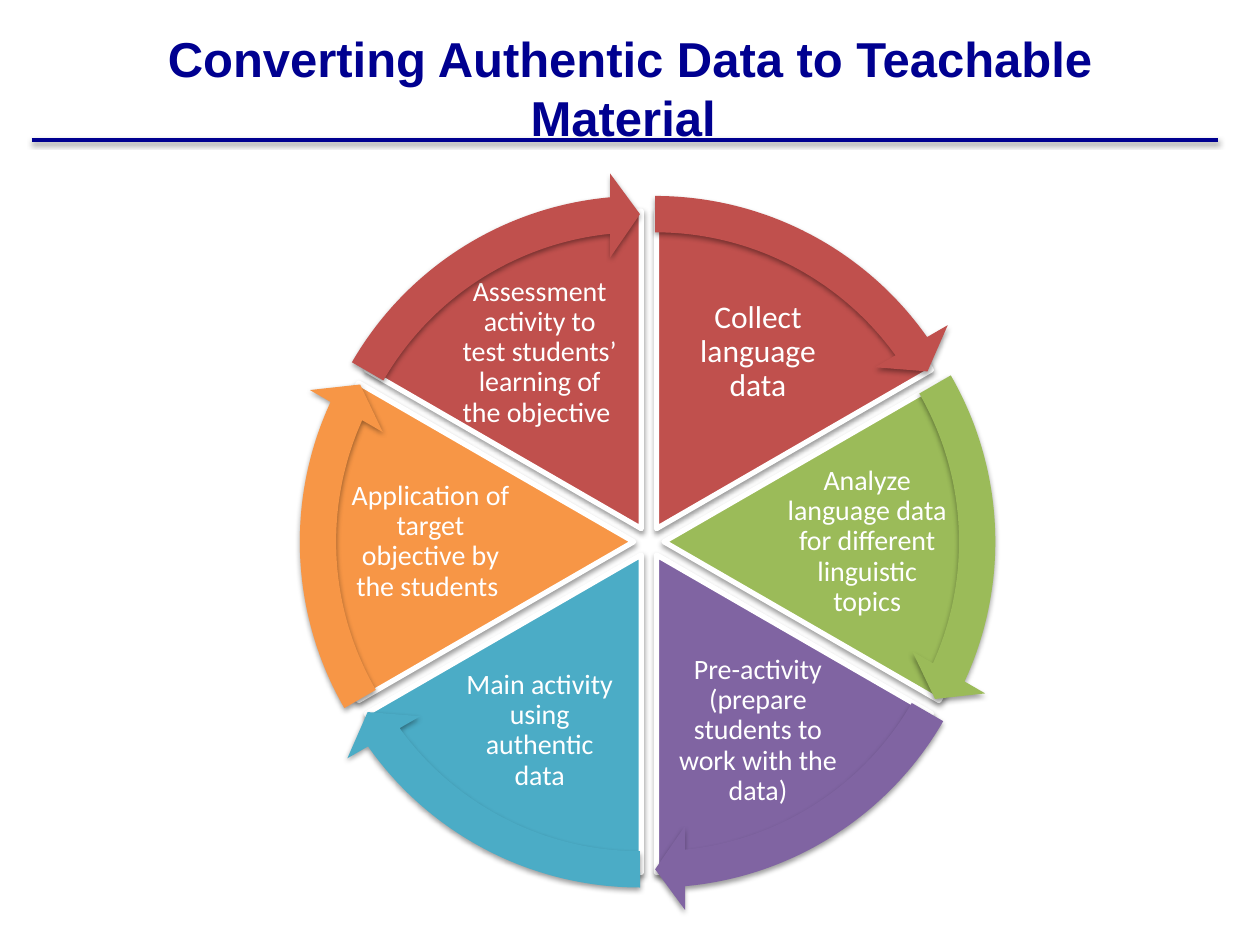
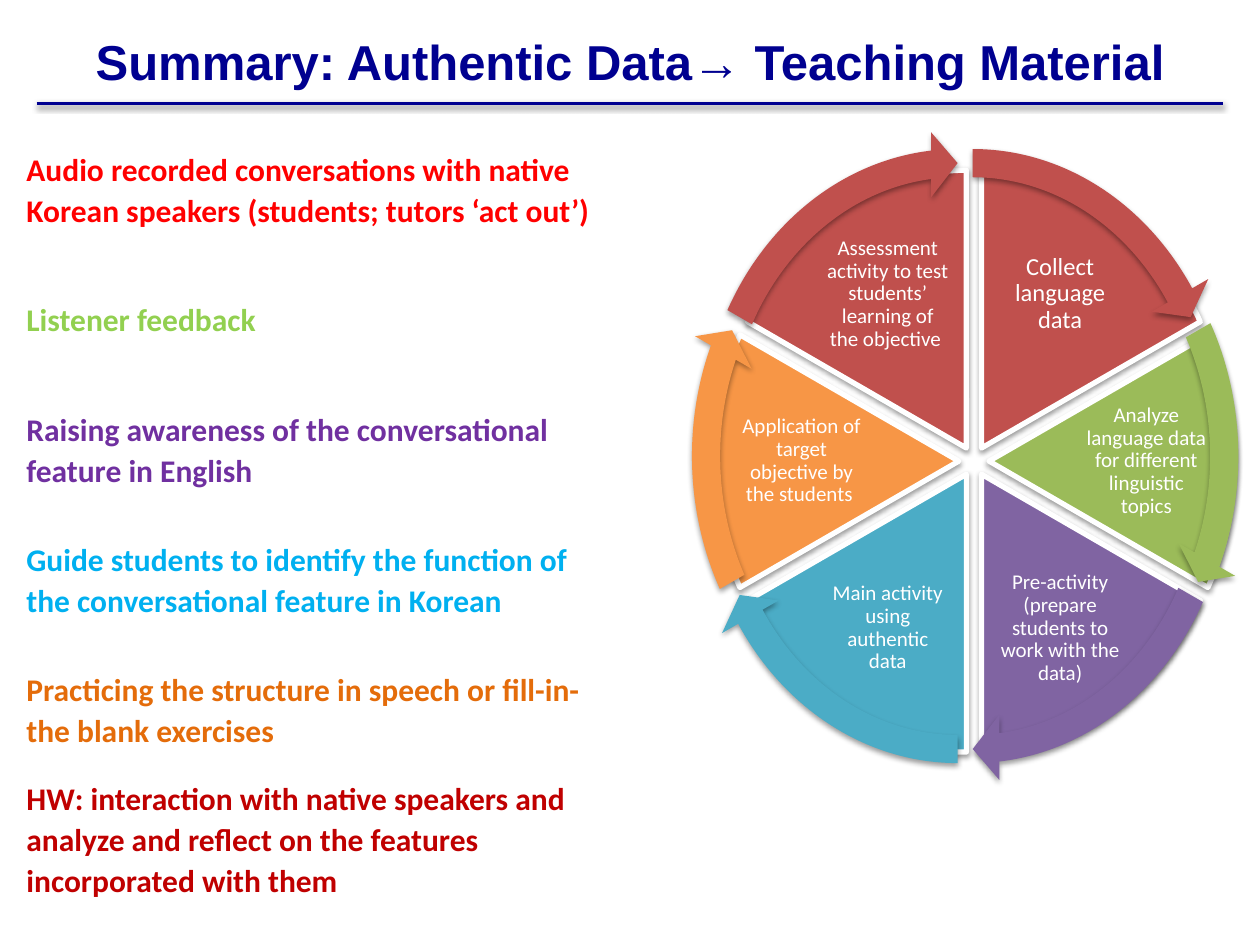
import math
from lxml import etree
from pptx import Presentation
from pptx import util as u
from pptx.dml.color import RGBColor
from pptx.enum import shapes, text
from pptx.oxml import ns

COLORS = {
    "navy": "000090", "white": "FFFFFF", "black": "000000",
    "brick": "C0504D", "olive": "9BBB59", "purple": "8064A2",
    "teal": "4BACC6", "orange": "F79646",
    "red": "FF0000", "lime": "92D050", "violet": "7030A0",
    "sky": "00B0F0", "amber": "E46C0A", "dark red": "C00000",
}
RGB = {name: RGBColor.from_string(value) for name, value in COLORS.items()}

presentation = Presentation()
presentation.slide_width = u.Inches(10)
presentation.slide_height = u.Inches(7.5)
UNIT = presentation.slide_width / 100  # grid of 100 columns by 75 rows


def grid(*lengths):
    return [u.Emu(round(length * UNIT)) for length in lengths]


def add_shadow(shape):
    effects = etree.SubElement(shape._element.spPr, ns.qn("a:effectLst"))
    shadow = etree.SubElement(effects, ns.qn("a:outerShdw"), blurRad="40000",
                              dist="20000", dir="5400000", rotWithShape="0")
    color = etree.SubElement(shadow, ns.qn("a:srgbClr"), val=COLORS["black"])
    etree.SubElement(color, ns.qn("a:alpha"), val="38000")


# Steps of the cycle, clockwise from the top right
STEPS = [
    ("Collect language data", "brick"),
    ("Analyze language data for different linguistic topics", "olive"),
    ("Pre-activity (prepare students to work with the data)", "purple"),
    ("Main activity using authentic data", "teal"),
    ("Application of target objective by the students ", "orange"),
    ("Assessment activity to test students’ learning of the objective ", "brick"),
]
EXAMPLES = [
    ("Audio recorded conversations with native Korean speakers "
     "(students; tutors ‘act out’)", "red"),
    ("Listener feedback", "lime"),
    ("Raising awareness of the conversational feature in English", "violet"),
    ("Guide students to identify the function of the conversational "
     "feature in Korean", "sky"),
    ("Practicing the structure in speech or fill-in-the blank exercises", "amber"),
    ("HW: interaction with native speakers and analyze and reflect on the "
     "features incorporated with them", "dark red"),
]

# Angles count 216 to a full turn, the scale of the shape adjustments
TURN, SLICE, HEAD = 216, 36, 3.275
SPREAD = 1.2  # distance of each slice from the centre of the wheel

PAGES = [
    {"title": "Converting Authentic Data to Teachable Material ",
     "title_height": 12.5, "rule": (2.5, 96.7, 11.1),
     "pie_center": (51.5, 43), "pie_size": (50.4, 50.4),
     "arrow_center": (51.4, 43), "arrow_size": (56.6, 56.6), "font_size": 16},
    {"title": "Summary: Authentic Data→ Teaching Material",
     "title_height": 8.2, "rule": (2.9, 97.1, 8.2),
     "pie_center": (77.3, 36.6), "pie_size": (39, 44.1),
     "arrow_center": (76.6, 36.2), "arrow_size": (43.9, 49.6), "font_size": 12},
]

for page in PAGES:
    slide = presentation.slides.add_slide(presentation.slide_layouts[5])

    # Title and the rule under it
    title = slide.shapes.title
    title.left, title.top, title.width, title.height = grid(
        5, 0.7, 90, page["title_height"])
    title.text_frame.text = page["title"]
    title.text_frame.auto_size = text.MSO_AUTO_SIZE.NONE
    title.text_frame.vertical_anchor = text.MSO_ANCHOR.MIDDLE
    paragraph = title.text_frame.paragraphs[0]
    paragraph.alignment = text.PP_ALIGN.CENTER
    paragraph.font.name, paragraph.font.size = "Arial", u.Pt(28)
    paragraph.font.bold = True
    paragraph.font.color.rgb = RGB["navy"]

    start, end, height = page["rule"]
    rule = slide.shapes.add_connector(
        shapes.MSO_CONNECTOR.STRAIGHT, *grid(start, height, end, height))
    rule.line.color.rgb = RGB["navy"]
    rule.line.width = u.Pt(2)
    add_shadow(rule)

    # Table of examples, one row for each step
    if page is PAGES[1]:
        table = slide.shapes.add_table(
            len(EXAMPLES), 1, *grid(1.4, 9.9, 48, 61.9)).table
        table.first_row = table.horz_banding = False
        for row, (example, color) in enumerate(EXAMPLES):
            cell = table.cell(row, 0)
            cell.fill.background()
            cell.vertical_anchor = text.MSO_ANCHOR.MIDDLE
            cell.margin_left = cell.margin_right = u.Inches(0.07)
            cell.margin_top = cell.margin_bottom = 0
            cell.text = example
            paragraph = cell.text_frame.paragraphs[0]
            paragraph.line_spacing = 1.07
            paragraph.font.name, paragraph.font.size = "Calibri", u.Pt(18)
            paragraph.font.bold = True
            paragraph.font.color.rgb = RGB[color]

    # Slices of the wheel with their labels
    center_x, center_y = page["pie_center"]
    width, height = page["pie_size"]
    for index, (step, color) in enumerate(STEPS):
        direction = math.radians(60 * (index - 1))
        across, down = math.cos(direction), math.sin(direction)
        start = (162 + SLICE * index) % TURN
        pie = slide.shapes.add_shape(shapes.MSO_SHAPE.PIE, *grid(
            center_x + SPREAD * across - width / 2,
            center_y + SPREAD * down - height / 2, width, height))
        pie.adjustments[0] = start
        pie.adjustments[1] = (start + SLICE) % TURN
        pie.fill.solid()
        pie.fill.fore_color.rgb = RGB[color]
        pie.line.color.rgb = RGB["white"]
        pie.line.width = u.Pt(3)
        add_shadow(pie)

        label_width = width * (0.27 if index in (1, 4) else 0.26)
        label_height = height * 0.2
        label = slide.shapes.add_textbox(*grid(
            center_x + (0.32 * width + SPREAD) * across - label_width / 2,
            center_y + (0.32 * height + SPREAD) * down - label_height / 2,
            label_width, label_height))
        frame = label.text_frame
        frame.word_wrap = True
        frame.vertical_anchor = text.MSO_ANCHOR.MIDDLE
        frame.margin_left = frame.margin_right = u.Inches(0.02)
        frame.margin_top = frame.margin_bottom = u.Inches(0.02)
        frame.text = step
        paragraph = frame.paragraphs[0]
        paragraph.alignment = text.PP_ALIGN.CENTER
        paragraph.line_spacing = 0.9
        paragraph.font.name = "Calibri"
        paragraph.font.size = u.Pt(page["font_size"] + (2 if index == 0 else 0))
        paragraph.font.color.rgb = RGB["white"]

    # Arrows around the wheel
    center_x, center_y = page["arrow_center"]
    width, height = page["arrow_size"]
    for index, (step, color) in enumerate(STEPS):
        direction = math.radians(60 * (index - 1))
        start = (162 + SLICE * index) % TURN
        arrow = slide.shapes.add_shape(shapes.MSO_SHAPE.CIRCULAR_ARROW, *grid(
            center_x + SPREAD * math.cos(direction) - width / 2,
            center_y + SPREAD * math.sin(direction) - height / 2, width, height))
        tip = (start + SLICE) % TURN - HEAD
        for position, value in enumerate((0.051, HEAD, tip, start, 0.059)):
            arrow.adjustments[position] = value
        arrow.fill.solid()
        arrow.fill.fore_color.rgb = RGB[color]
        arrow.line.fill.background()
        add_shadow(arrow)

presentation.save("out.pptx")
